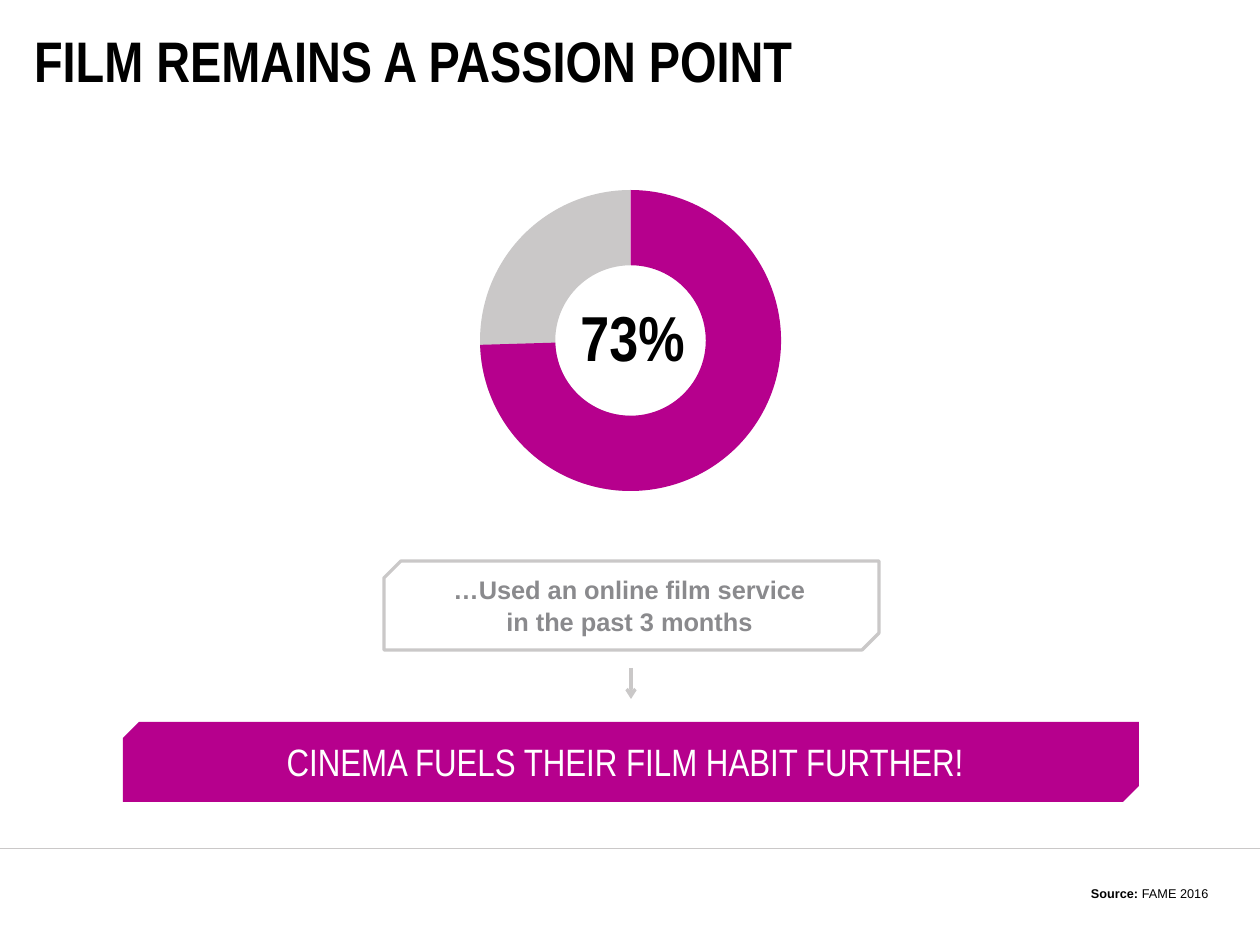
"""Build the slide on film as a passion point."""
from dataclasses import dataclass
from typing import Optional

from lxml import etree
from pptx import Presentation
from pptx import util as u
from pptx.dml.color import RGBColor
from pptx.enum import shapes, text
from pptx.oxml import ns
from pptx.shapes import autoshape as auto
from pptx.shapes import shapetree as tree
from pptx.slide import Slide

PX = 8000
WIDE, HIGH = 1260, 945
HUES = {"pink": "B6008D", "pale": "CAC8C8", "gray": "8A8A8D",
        "black": "000000", "white": "FFFFFF"}
KIND, SIDE, EDGE = shapes.MSO_SHAPE, text.PP_ALIGN, text.MSO_ANCHOR


@dataclass
class Form:
    kind: shapes.MSO_SHAPE
    place: tuple[int, int, int, int]
    fill: Optional[str] = None
    line: Optional[str] = None
    turn: int = 0
    tweaks: tuple[float, ...] = ()


@dataclass
class Rule:
    start: tuple[int, int]
    end: tuple[int, int]
    width: float
    arrow: bool = False


@dataclass
class Label:
    slot: int
    place: tuple[int, int, int, int]
    runs: tuple[tuple[str, bool], ...]
    size: int
    face: str = "Arial"
    hue: str = "black"
    side: SIDE = SIDE.CENTER
    edge: EDGE = EDGE.MIDDLE
    lead: Optional[int] = None


RING = (480, 190, 301, 301)
RULES = [Rule((0, 848), (WIDE, 848), 0.5),
         Rule((631, 668), (631, 699), 2, arrow=True)]
FRAMES = [
    Form(KIND.SNIP_2_DIAG_RECTANGLE, (123, 722, 1016, 80), fill="pink",
         tweaks=(0.2, 0)),
    Form(KIND.SNIP_2_DIAG_RECTANGLE, (384, 561, 495, 89), line="pale",
         tweaks=(0.19, 0)),
]
ARCS = [
    Form(KIND.BLOCK_ARC, RING, fill="pale", turn=270),
    Form(KIND.BLOCK_ARC, RING, fill="pink", turn=90,
         tweaks=(108, 53.01, 0.25)),
]
LABELS = [
    Label(0, (34, 34, 1164, 51), (("FILM REMAINS A PASSION POINT", True),),
          36, "Arial Narrow", side=SIDE.LEFT),
    Label(1, (413, 567, 433, 75),
          (("…Used an online film service\nin the past 3 months", True),),
          16, hue="gray", lead=20),
    Label(2, (153, 733, 953, 57),
          (("CINEMA FUELS THEIR FILM HABIT FURTHER! ", False),),
          24, "Arial Narrow", "white"),
    Label(3, (549, 880, 671, 27), (("Source: ", True), ("FAME 2016", False)),
          8, side=SIDE.RIGHT, edge=EDGE.BOTTOM),
    Label(4, (552, 298, 161, 82), (("73%", True),),
          40, "Arial Narrow", edge=EDGE.BOTTOM),
]


def tint(name: str) -> RGBColor:
    return RGBColor.from_string(HUES[name])


def draw_rule(slide: Slide, rule: Rule) -> None:
    ends = [n * PX for n in rule.start + rule.end]
    line = slide.shapes.add_connector(shapes.MSO_CONNECTOR.STRAIGHT, *ends)
    line.line.color.rgb = tint("pale")
    line.line.width = u.Pt(rule.width)
    props = line._element.spPr
    if rule.arrow:
        etree.SubElement(props.find(ns.qn("a:ln")), ns.qn("a:tailEnd"), type="arrow")
    etree.SubElement(props, ns.qn("a:effectLst"))
    slide.shapes.title._element.addprevious(line._element)


def draw_form(home: tree.SlideShapes | tree.GroupShapes, form: Form) -> auto.Shape:
    shape = home.add_shape(form.kind, *(n * PX for n in form.place))
    shape.shadow.inherit = False
    shape.rotation = form.turn
    for index, value in enumerate(form.tweaks):
        shape.adjustments[index] = value
    if form.fill:
        shape.fill.solid()
        shape.fill.fore_color.rgb = tint(form.fill)
    else:
        shape.fill.background()
    if form.line:
        shape.line.color.rgb = tint(form.line)
        shape.line.width = u.Pt(2)
    else:
        shape.line.fill.background()
    return shape


def write_label(slide: Slide, label: Label) -> None:
    box = slide.placeholders[label.slot]
    box.left, box.top, box.width, box.height = (n * PX for n in label.place)
    frame = box.text_frame
    frame.vertical_anchor = label.edge
    if label.slot == 0:
        frame.word_wrap = False
        frame.auto_size = text.MSO_AUTO_SIZE.NONE
        frame.margin_left = frame.margin_right = 0
        frame.margin_top = frame.margin_bottom = 0
    else:
        frame.word_wrap = True
        frame.auto_size = text.MSO_AUTO_SIZE.SHAPE_TO_FIT_TEXT
    para = frame.paragraphs[0]
    props = para._p.get_or_add_pPr()
    props.set("marL", "0")
    props.set("indent", "0")
    etree.SubElement(props, ns.qn("a:buNone"))
    para.alignment = label.side
    para.space_before = u.Pt(0)
    if label.lead:
        para.line_spacing = u.Pt(label.lead)
    for words, bold in label.runs:
        for row, part in enumerate(words.split("\n")):
            if row:
                para.add_line_break()
            run = para.add_run()
            run.text = part
            run.font.name = label.face
            run.font.size = u.Pt(label.size)
            run.font.bold = bold
            run.font.color.rgb = tint(label.hue)


def main() -> None:
    deck = Presentation()
    deck.slide_width, deck.slide_height = WIDE * PX, HIGH * PX
    slide = deck.slides.add_slide(deck.slide_layouts.get_by_name("Comparison"))
    for rule in RULES:
        draw_rule(slide, rule)
    for form in FRAMES:
        shape = draw_form(slide.shapes, form)
        slide.shapes.title._element.addprevious(shape._element)
    for label in LABELS:
        write_label(slide, label)
    ring = slide.shapes.add_group_shape()
    for form in ARCS:
        draw_form(ring.shapes, form)
    deck.save("out.pptx")


if __name__ == "__main__":
    main()
